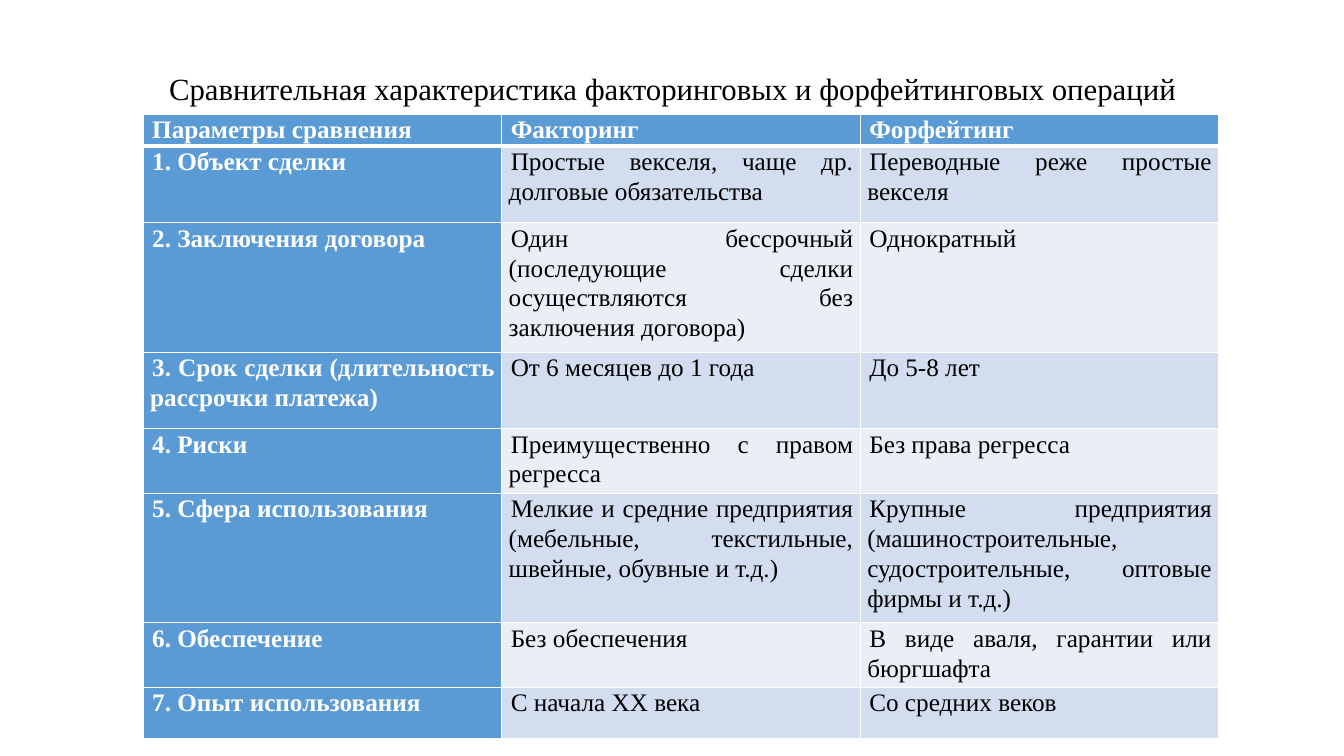
from dataclasses import dataclass

from lxml.etree import SubElement
from pptx import Presentation
from pptx.dml.color import RGBColor as RGB
from pptx.enum.text import MSO_ANCHOR as Anchor, PP_ALIGN as Align
from pptx.oxml.ns import qn
from pptx.slide import Slide
from pptx.table import _Cell as Cell
from pptx.text.text import _Paragraph as Paragraph
from pptx.util import Inches, Length, Pt

WHITE = RGB(0xFF, 0xFF, 0xFF)
BLACK = RGB(0x00, 0x00, 0x00)
BLUE = RGB(0x5B, 0x9B, 0xD5)
LIGHT_BLUE = RGB(0xD2, 0xDE, 0xEF)
PALE_BLUE = RGB(0xEA, 0xEF, 0xF7)
FONT = "Times New Roman"

SLIDE_W, SLIDE_H = Inches(13.33), Inches(7.5)
ROW_UNIT = Pt(18.2)
THIN, THICK = Pt(1), Pt(3)
TITLE = "Сравнительная характеристика факторинговых и форфейтинговых операций"


@dataclass(frozen=True)
class Comparison:
    parameter: str
    factoring: str
    forfaiting: str
    units: int

    def texts(self) -> tuple[str, str, str]:
        return self.parameter, self.factoring, self.forfaiting


COMPARISONS = [
    Comparison("Параметры сравнения", "Факторинг", "Форфейтинг", 1),
    Comparison("1. Объект сделки",
               "Простые векселя, чаще др. долговые обязательства",
               "Переводные реже простые векселя", 3),
    Comparison("2. Заключения договора",
               "Один бессрочный (последующие сделки осуществляются без "
               "заключения договора)",
               "Однократный", 4),
    Comparison("3. Срок сделки (длительность рассрочки платежа)",
               "От 6 месяцев до 1 года", "До 5-8 лет", 3),
    Comparison("4. Риски", "Преимущественно с правом регресса",
               "Без права регресса", 2),
    Comparison("5. Сфера использования",
               "Мелкие и средние предприятия (мебельные, текстильные, "
               "швейные, обувные и т.д.)",
               "Крупные предприятия (машиностроительные, судостроительные, "
               "оптовые фирмы и т.д.)", 5),
    Comparison("6. Обеспечение", "Без обеспечения",
               "В виде аваля, гарантии или бюргшафта", 2),
    Comparison("7. Опыт использования", "С начала XX века",
               "Со средних веков", 2),
]


def across(percent: float) -> Length:
    return Length(round(SLIDE_W * percent / 100))


def down(percent: float) -> Length:
    return Length(round(SLIDE_H * percent / 100))


def write(paragraph: Paragraph, text: str, size: float, color: RGB,
          bold: bool, align: Align, spacing: float) -> None:
    paragraph.alignment = align
    paragraph.line_spacing = spacing
    run = paragraph.add_run()
    run.text = text
    run.font.name = FONT
    run.font.size = Pt(size)
    run.font.bold = bold
    run.font.color.rgb = color


def draw_borders(cell: Cell, top: Length, bottom: Length) -> None:
    properties = cell._tc.get_or_add_tcPr()
    widths = {"a:lnL": THIN, "a:lnR": THIN, "a:lnT": top, "a:lnB": bottom}
    for side, width in widths.items():
        line = SubElement(properties, qn(side), w=str(int(width)))
        fill = SubElement(line, qn("a:solidFill"))
        SubElement(fill, qn("a:srgbClr"), val=str(WHITE))


def draw_cell(cell: Cell, text: str, row: int, column: int) -> None:
    heading = row == 0 or column == 0
    draw_borders(cell, THICK if row == 1 else THIN,
                 THICK if row == 0 else THIN)
    cell.fill.solid()
    cell.fill.fore_color.rgb = (
        BLUE if heading else LIGHT_BLUE if row % 2 else PALE_BLUE)
    cell.margin_left = cell.margin_right = Inches(0.07)
    cell.margin_top = cell.margin_bottom = 0
    cell.vertical_anchor = Anchor.TOP
    paragraph = cell.text_frame.paragraphs[0]
    paragraph._p.get_or_add_pPr().set("indent", str(int(Inches(0.02))))
    write(paragraph, text, 18, WHITE if heading else BLACK, heading,
          Align.JUSTIFY, 1.07)


def draw_title(slide: Slide) -> None:
    title = slide.shapes.add_textbox(
        across(6.9), down(9.07), across(86.25), down(81.07))
    title.text_frame.word_wrap = True
    write(title.text_frame.paragraphs[0], TITLE, 22, BLACK, False,
          Align.CENTER, 0.9)


def draw_comparison(slide: Slide) -> None:
    column_width = across(26.68)
    total_units = sum(line.units for line in COMPARISONS)
    table = slide.shapes.add_table(
        len(COMPARISONS), 3, across(10.65), down(15.07),
        column_width * 3, ROW_UNIT * total_units).table
    for column in table.columns:
        column.width = column_width
    for row, line in enumerate(COMPARISONS):
        table.rows[row].height = ROW_UNIT * line.units
        for column, text in enumerate(line.texts()):
            draw_cell(table.cell(row, column), text, row, column)


def main() -> None:
    deck = Presentation()
    deck.slide_width, deck.slide_height = SLIDE_W, SLIDE_H
    slide = deck.slides.add_slide(deck.slide_layouts[6])
    draw_title(slide)
    draw_comparison(slide)
    deck.save("out.pptx")


if __name__ == "__main__":
    main()
